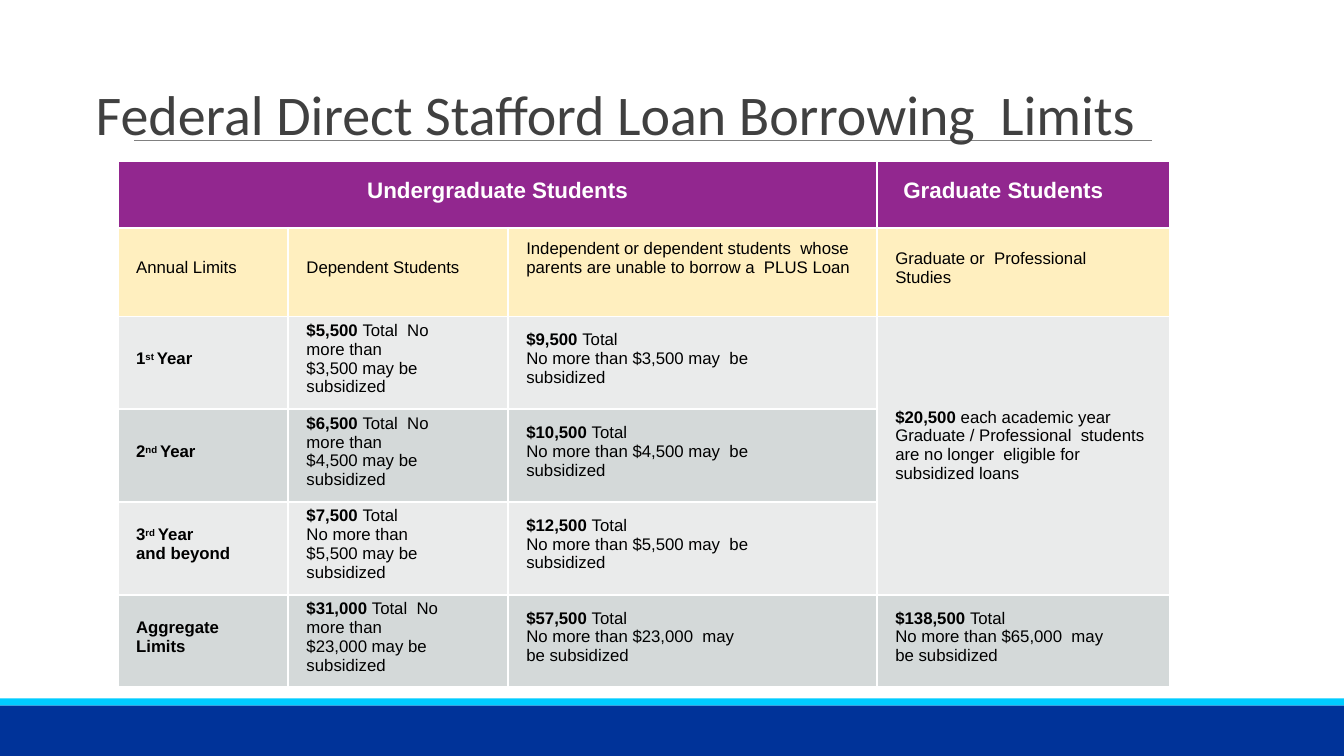
from lxml import etree
from pptx import Presentation
from pptx.dml.color import RGBColor
from pptx.enum.shapes import MSO_CONNECTOR, MSO_SHAPE
from pptx.enum.text import MSO_ANCHOR, PP_ALIGN
from pptx.oxml.ns import qn
from pptx.util import Inches, Pt

LINE = MSO_CONNECTOR.STRAIGHT
RECT = MSO_SHAPE.RECTANGLE
MIDDLE = MSO_ANCHOR.MIDDLE
LEFT, CENTER = PP_ALIGN.LEFT, PP_ALIGN.CENTER

WIDTH, HEIGHT = 13.33, 7.5
PURPLE, CREAM, LIGHT, GREY = "92278F", "FFEFBF", "EAEBEB", "D4D9D9"
WHITE, BLACK = "FFFFFF", "000000"
COLUMN_WIDTHS = [1.69, 2.18, 3.66, 2.9]
ROW_HEIGHTS = [0.66, 0.88] + [0.92] * 4
INDENT = 0.18

ANNUAL_LIMITS = [
    ([[("1", "b"), ("st ", "sup"), ("Year", "b")]],
     "$5,500 ", "$9,500 ", "$3,500 "),
    ([[("2", "b"), ("nd ", "sup"), ("Year", "b")]],
     "$6,500 ", "$10,500 ", "$4,500 "),
    ([[("3", "b"), ("rd ", "sup"), ("Year", "b")], [("and beyond", "b")]],
     "$7,500 ", "$12,500 ", "$5,500 "),
    ([[("Aggregate Limits", "b")]],
     "$31,000 ", "$57,500 ", "$23,000 "),
]


def color(hex_code):
    """Turn a hex string into a colour."""
    return RGBColor.from_string(hex_code)


def write(frame, paragraphs, size=12, font="Arial", ink=BLACK, align=LEFT):
    """Fill a text frame with paragraphs, each a list of (text, style) runs."""
    frame.word_wrap = True
    for number, runs in enumerate(paragraphs):
        paragraph = frame.paragraphs[0] if number == 0 else frame.add_paragraph()
        paragraph.alignment = align
        for text, style in runs:
            run = paragraph.add_run()
            run.text = text
            run.font.size = Pt(size)
            run.font.name = font
            run.font.bold = style in ("b", "sup")
            run.font.color.rgb = color(ink)
            if style == "sup":
                run.font._element.set("baseline", "24000")


def add_borders(cell):
    """Draw a white line on each side of a cell."""
    properties = cell._tc.get_or_add_tcPr()
    for position, side in enumerate(("lnL", "lnR", "lnT", "lnB")):
        border = etree.Element(qn(f"a:{side}"), w=str(Pt(1.5)))
        fill = etree.SubElement(border, qn("a:solidFill"))
        etree.SubElement(fill, qn("a:srgbClr"), val=WHITE)
        properties.insert(position, border)


def fill_cell(cell, paragraphs, left=INDENT, right=0.2, bottom=0.08, **text_format):
    """Write one table cell with its margins."""
    cell.margin_left, cell.margin_right = Inches(left), Inches(right)
    cell.margin_top, cell.margin_bottom = 0, Inches(bottom)
    cell.vertical_anchor = MIDDLE
    write(cell.text_frame, paragraphs, **text_format)


def total_limit(total, subsidized):
    """Give the two paragraphs that state a total and its subsidized part."""
    return [[(total, "b"), ("Total", "")],
            [(f"No more than {subsidized}may  be subsidized", "")]]


def dependent_limit(total, subsidized, separate):
    """Give the paragraphs of a dependent student's limit."""
    rest = [(f"{subsidized}may be  subsidized", "")]
    if separate:
        return [[(total, "b"), ("Total", "")], [("No more than", "")], rest]
    return [[(total, "b"), ("Total  No more than", "")], rest]


def aggregate_limit(total, subsidized):
    """Give the paragraphs of an aggregate limit."""
    return [[(total, "b"), ("Total", "")],
            [(f"No more than {subsidized} may be subsidized", "")]]


def add_footer(slide, left, top, width):
    """Draw the cyan stripe and the blue band below it."""
    for offset, height, hex_code in ((0, 0.07, "00CCFF"), (0.07, 0.5, "003399")):
        band = slide.shapes.add_shape(RECT, Inches(left), Inches(top + offset),
                                      Inches(width), Inches(height))
        band.shadow.inherit = False
        band.fill.solid()
        band.fill.fore_color.rgb = color(hex_code)
        band.line.fill.background()


def add_title(slide, left, top, width, height):
    """Place the title and the thin rule across its foot."""
    rule_y = Inches(top + height - 0.08)
    rule = slide.shapes.add_connector(LINE, Inches(left + 0.38), rule_y,
                                      Inches(left + 10.48), rule_y)
    rule.line.color.rgb = color("808080")
    rule.line.width = Pt(0.5)
    etree.SubElement(rule._element.spPr, qn("a:effectLst"))
    frame = slide.shapes.add_textbox(Inches(left), Inches(top),
                                     Inches(width), Inches(height)).text_frame
    frame.margin_left = frame.margin_right = 0
    frame.margin_top = frame.margin_bottom = 0
    frame.vertical_anchor = MIDDLE
    write(frame, [[("Federal Direct Stafford Loan Borrowing  Limits", "")]],
          size=40, font="Calibri", ink="404040")


def add_limits_table(slide, left, top):
    """Build the table of borrowing limits."""
    table = slide.shapes.add_table(
        len(ROW_HEIGHTS), len(COLUMN_WIDTHS), Inches(left), Inches(top),
        Inches(sum(COLUMN_WIDTHS)), Inches(sum(ROW_HEIGHTS))).table
    for column, width in zip(table.columns, COLUMN_WIDTHS):
        column.width = Inches(width)
    for row, height, hex_code in zip(table.rows, ROW_HEIGHTS,
                                     [PURPLE, CREAM] + [LIGHT, GREY] * 2):
        row.height = Inches(height)
        for cell in row.cells:
            cell.fill.solid()
            cell.fill.fore_color.rgb = color(hex_code)
            add_borders(cell)
    table.cell(0, 0).merge(table.cell(0, 2))
    table.cell(2, 3).merge(table.cell(4, 3))

    heading = {"size": 16, "ink": WHITE}
    fill_cell(table.cell(0, 0), [[("Undergraduate Students", "b")]],
              left=0, right=0, align=CENTER, **heading)
    fill_cell(table.cell(0, 3), [[("Graduate Students", "b")]], left=0.26, **heading)

    fill_cell(table.cell(1, 0), [[("Annual Limits", "")]])
    fill_cell(table.cell(1, 1), [[("Dependent Students", "")]])
    fill_cell(table.cell(1, 2), [[("Independent or dependent students  whose parents "
                                   "are unable to borrow a  PLUS Loan", "")]], bottom=0.28)
    fill_cell(table.cell(1, 3), [[("Graduate or  Professional Studies", "")]], right=0.6)

    last = len(ROW_HEIGHTS) - 1
    for row, (label, dependent, independent, subsidized) in enumerate(ANNUAL_LIMITS, 2):
        fill_cell(table.cell(row, 0), label, right=0.45)
        fill_cell(table.cell(row, 1),
                  dependent_limit(dependent, subsidized, row == last - 1), right=0.6)
        if row < last:
            fill_cell(table.cell(row, 2), total_limit(independent, subsidized), right=1)
        else:
            fill_cell(table.cell(row, 2), aggregate_limit(independent, subsidized), right=1.3)

    fill_cell(table.cell(2, 3), [[
        ("$20,500 ", "b"),
        ("each academic year  Graduate / Professional  students "
         "are no longer  eligible for subsidized loans", "")]], bottom=0.2)
    fill_cell(table.cell(last, 3), aggregate_limit("$138,500 ", "$65,000 "), right=0.54)


def main():
    """Build and save the slide."""
    deck = Presentation()
    deck.slide_width, deck.slide_height = Inches(WIDTH), Inches(HEIGHT)
    slide = deck.slides.add_slide(deck.slide_layouts[6])
    add_footer(slide, 0, 6.93, WIDTH)
    add_title(slide, 0.95, 0.78, 11.3, 0.69)
    add_limits_table(slide, 1.17, 1.6)
    deck.save("out.pptx")


if __name__ == "__main__":
    main()
